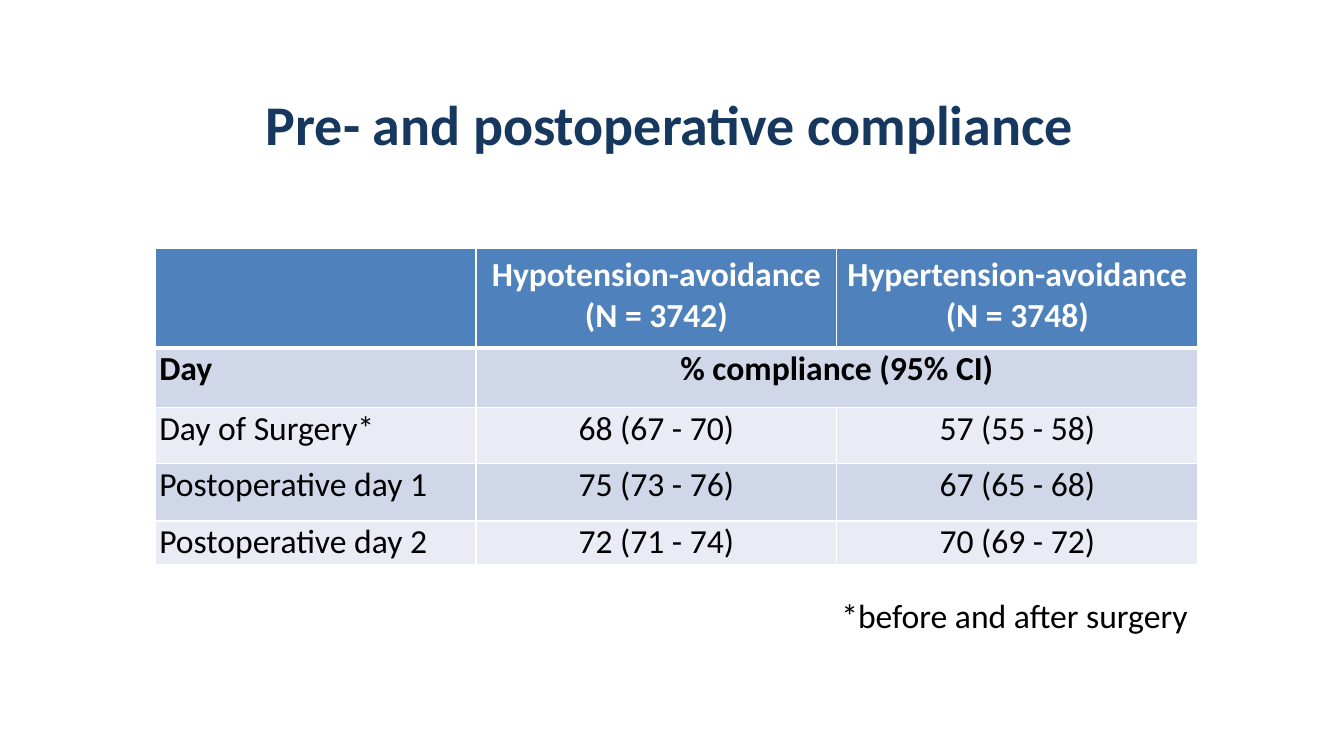
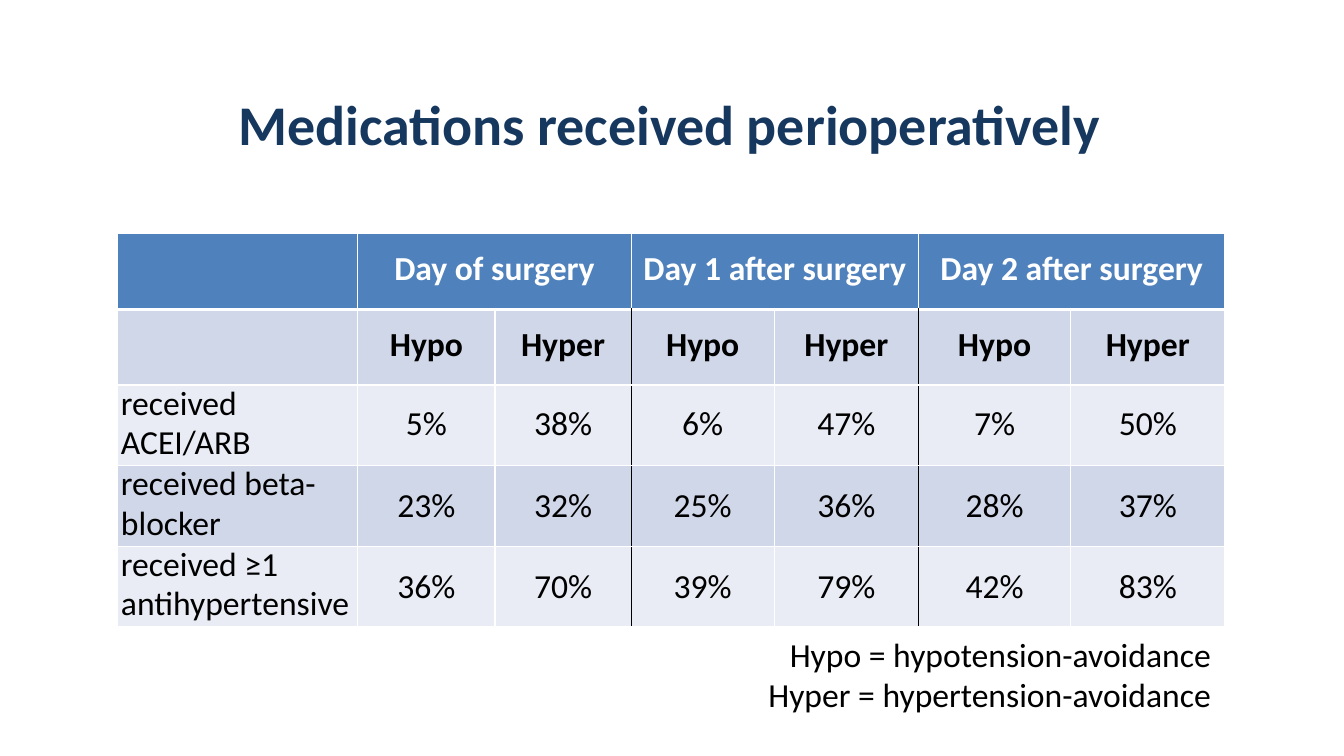
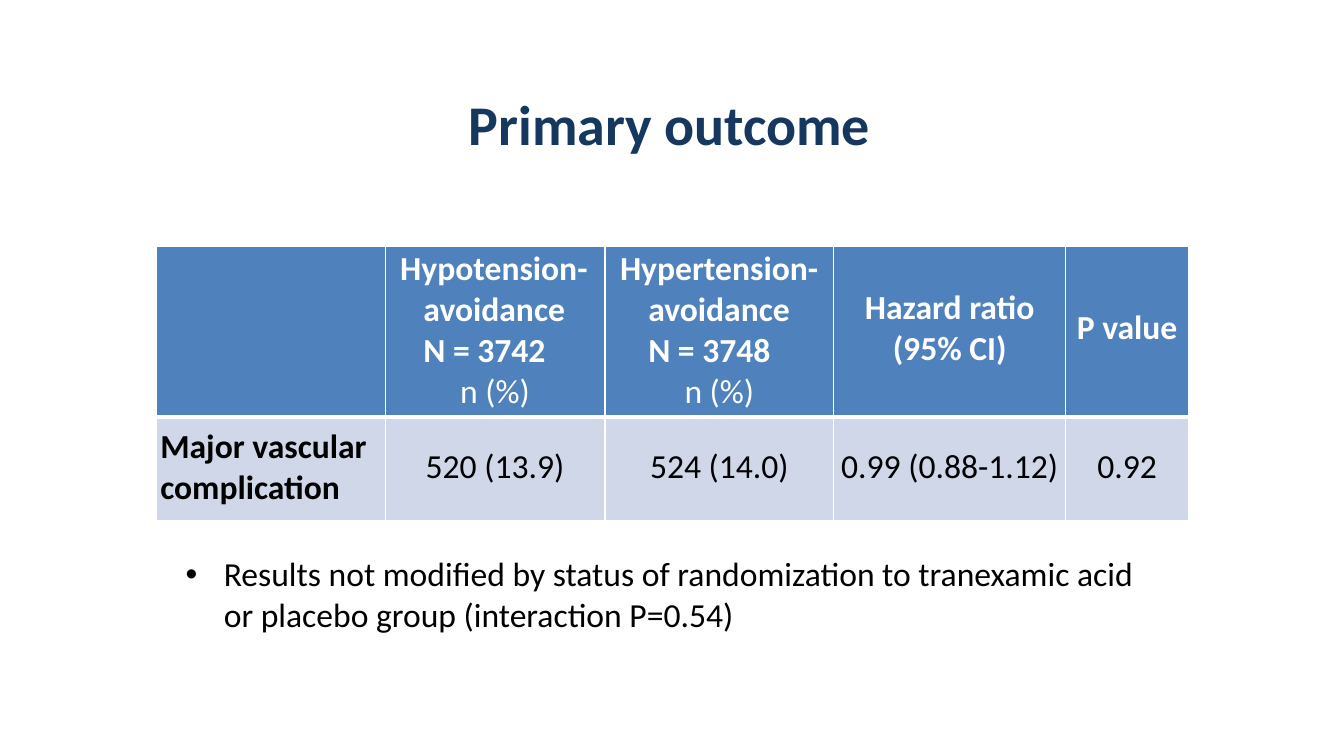
from dataclasses import dataclass

from lxml import etree
from pptx import Presentation
from pptx import util as u
from pptx.dml.color import RGBColor
from pptx.enum import text
from pptx.oxml import ns

PX = 9144
FONT = "Calibri"
NAVY = RGBColor(0x16, 0x37, 0x5E)
BLUE = RGBColor(0x4F, 0x81, 0xBC)
BAND = RGBColor(0xD0, 0xD7, 0xE8)
PALE = RGBColor(0xE9, 0xEC, 0xF4)
WHITE = RGBColor(0xFF, 0xFF, 0xFF)
BLACK = RGBColor(0x00, 0x00, 0x00)
LEFT, CENTER, RIGHT = text.PP_ALIGN.LEFT, text.PP_ALIGN.CENTER, text.PP_ALIGN.RIGHT


@dataclass
class Row:
    height: int
    label_top: int
    value_top: int
    cells: list
    bold: bool = False


def px(value):
    return u.Emu(value * PX)


def indent(paragraph, left, first):
    properties = paragraph._p.get_or_add_pPr()
    properties.set("marL", str(left * PX))
    properties.set("indent", str(first * PX))
    return properties


def border(cell, side, color, points):
    properties = cell._tc.get_or_add_tcPr()
    line = etree.SubElement(properties, ns.qn(f"a:ln{side}"), w=str(u.Pt(points)))
    fill = etree.SubElement(line, ns.qn("a:solidFill"))
    etree.SubElement(fill, ns.qn("a:srgbClr"), val=str(color))


class Deck:
    def __init__(self):
        self.presentation = Presentation()
        self.presentation.slide_width = px(1333)
        self.presentation.slide_height = px(750)
        self.slide = None

    def start(self, title):
        self.slide = self.presentation.slides.add_slide(self.presentation.slide_layouts[6])
        self.text(100, 88, 1128, 69, title, CENTER, 40, NAVY, True)

    def style(self, frame, content, align, size, color, bold):
        frame.text = content
        frame.word_wrap = True
        for paragraph in frame.paragraphs:
            paragraph.alignment = align
            font = paragraph.font
            font.name, font.size, font.bold = FONT, u.Pt(size), bold
            font.color.rgb = color

    def text(self, left, top, width, height, content, align=LEFT, size=24, color=BLACK, bold=False):
        frame = self.slide.shapes.add_textbox(px(left), px(top), px(width), px(height)).text_frame
        frame.margin_left = frame.margin_right = frame.margin_bottom = 0
        frame.margin_top = px(1)
        self.style(frame, content, align, size, color, bold)
        return frame

    def note(self, right, top, height, content):
        width = 470
        self.text(right - width, top, width, height, content, RIGHT)

    def bullet(self, left, top, width, height, content):
        paragraph = self.text(left, top, width, height, content).paragraphs[0]
        properties = indent(paragraph, 39, -38)
        etree.SubElement(properties, ns.qn("a:buFont"), typeface="Arial")
        etree.SubElement(properties, ns.qn("a:buChar"), char="•")
        fonts = properties.find(ns.qn("a:defRPr"))
        properties.append(fonts)

    def table(self, left, top, widths, rows, dividers=()):
        height = sum(row.height for row in rows)
        frame = self.slide.shapes.add_table(
            len(rows), len(widths), px(left), px(top), px(sum(widths)), px(height))
        table = frame.table
        table.first_row = table.horz_banding = False
        for column, width in zip(table.columns, widths):
            column.width = px(width)
        for number, row in enumerate(rows):
            table.rows[number].height = px(row.height)
            for column, content in enumerate(row.cells):
                self.cell(table, number, column, row, content, dividers)
        return table

    def cell(self, table, number, column, row, content, dividers):
        cell = table.cell(number, column)
        header, label = number == 0, column == 0
        for side, edge in (("L", column), ("R", column + 1)):
            border(cell, side, BLACK if edge in dividers and not header else WHITE, 1)
        border(cell, "T", WHITE, 3 if number == 1 else 1)
        border(cell, "B", WHITE, 3 if header else 1)
        cell.fill.solid()
        cell.fill.fore_color.rgb = BLUE if header else BAND if number % 2 else PALE
        cell.margin_left = px(4 if label else 0)
        cell.margin_right = cell.margin_bottom = 0
        cell.margin_top = px(row.label_top if label else row.value_top)
        if content is None:
            table.cell(number, column - 1).merge(cell)
        elif content:
            self.style(cell.text_frame, content, LEFT if label else CENTER, 24,
                       WHITE if header else BLACK, header or row.bold)


def compliance(deck):
    deck.start("Pre- and postoperative compliance")
    deck.table(154, 246, [318, 358, 358], [
        Row(99, 7, 7, ["", "Hypotension-avoidance\v(N = 3742)", "Hypertension-avoidance\v(N = 3748)"]),
        Row(59, 1, 1, ["Day", "% compliance (95% CI)", None], True),
        Row(56, 1, 1, ["Day of Surgery*", "68 (67 - 70)", "57 (55 - 58)"]),
        Row(57, 1, 1, ["Postoperative day 1", "75 (73 - 76)", "67 (65 - 68)"]),
        Row(43, 1, 1, ["Postoperative day 2", "72 (71 - 74)", "70 (69 - 72)"]),
    ])
    deck.note(1178, 589, 43, "*before and after surgery")


def medications(deck):
    deck.start("Medications received perioperatively")
    table = deck.table(116, 232, [239, 136, 135, 142, 143, 151, 153], [
        Row(75, 15, 15, ["", "Day of surgery", None, "Day 1 after surgery", None,
                         "Day 2 after surgery", None]),
        Row(75, 15, 15, [""] + ["Hypo", "Hyper"] * 3, True),
        Row(80, 0, 18, ["received\nACEI/ARB", "5%", "38%", "6%", "47%", "7%", "50%"]),
        Row(80, 0, 20, ["received beta-\nblocker", "23%", "32%", "25%", "36%", "28%", "37%"]),
        Row(80, 0, 20, ["received ≥1\nantihypertensive", "36%", "70%", "39%", "79%", "42%", "83%"]),
    ], dividers=(3, 5))
    for number in range(2, 5):
        for paragraph in table.cell(number, 0).text_frame.paragraphs:
            paragraph.line_spacing = u.Pt(28)
    deck.note(1201, 628, 83, "Hypo = hypotension-avoidance\vHyper = hypertension-avoidance")


def outcome(deck):
    deck.start("Primary outcome")
    table = deck.table(155, 244, [227, 218, 227, 230, 122], [
        Row(170, 3, 3, ["", "Hypotension-\vavoidance\vN = 3742\nn (%)",
                        "Hypertension-\vavoidance\vN = 3748\nn (%)",
                        "Hazard ratio\v(95% CI)", "P value"]),
        Row(102, 9, 29, ["Major vascular complication", "520 (13.9)", "524 (14.0)",
                         "0.99 (0.88-1.12)", "0.92"]),
    ])
    for column, left in ((1, 38), (2, 43)):
        group, unit = table.cell(0, column).text_frame.paragraphs
        group.alignment = LEFT
        indent(group, left, 15 - left)
        unit.font.bold = False
    for column, top in ((3, 41), (4, 61)):
        table.cell(0, column).margin_top = px(top)
    table.cell(1, 0).text_frame.paragraphs[0].font.bold = True
    deck.bullet(183, 548, 942, 83,
                "Results not modified by status of randomization to tranexamic acid "
                "or placebo group (interaction P=0.54)")


def main():
    deck = Deck()
    for build in (compliance, medications, outcome):
        build(deck)
    deck.presentation.save("out.pptx")


if __name__ == "__main__":
    main()
